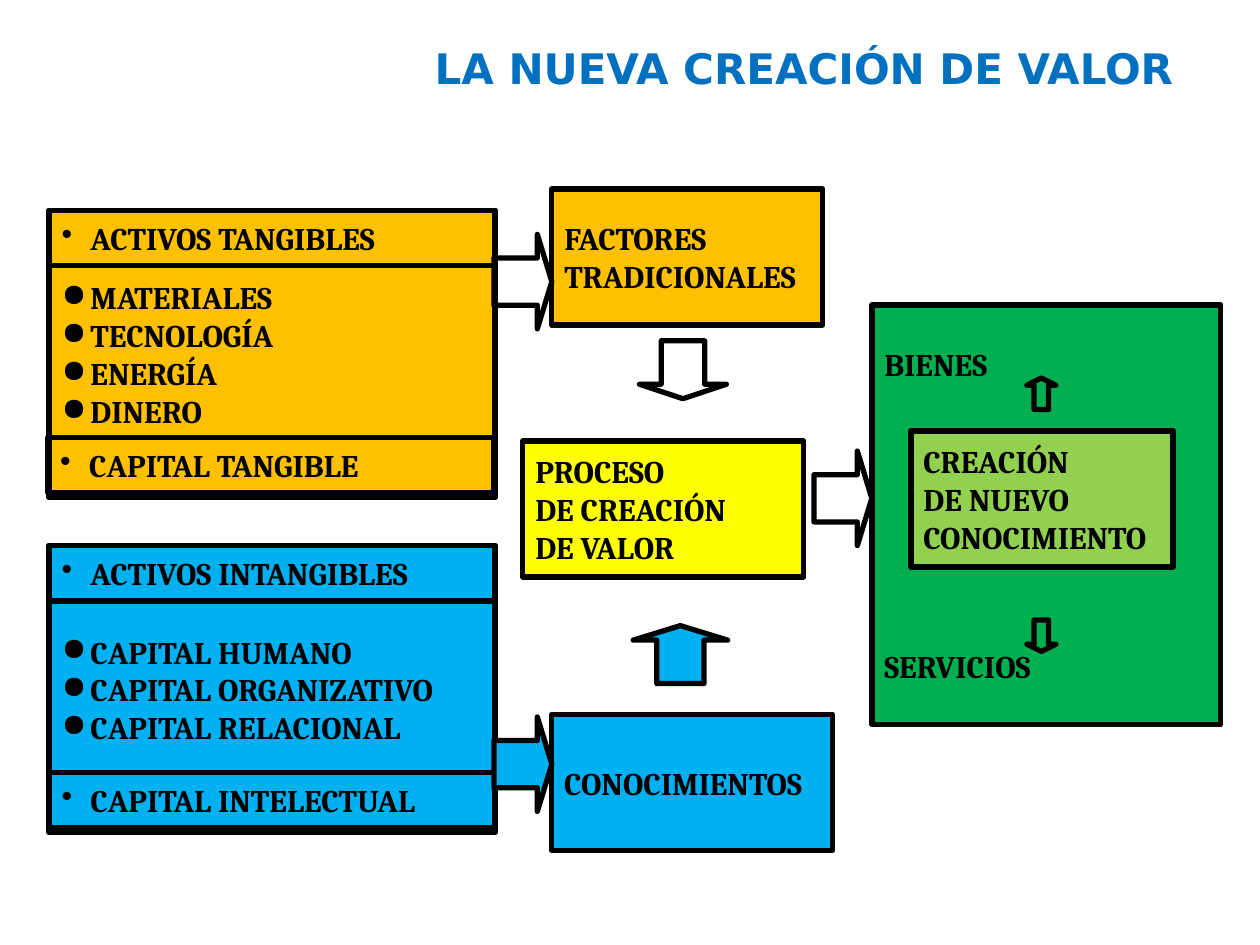
import pptx
from pptx.dml.color import RGBColor
from pptx.enum.shapes import MSO_SHAPE
from pptx.enum.text import MSO_ANCHOR, PP_ALIGN
from pptx.oxml.ns import qn
from pptx.util import Inches, Pt
from lxml import etree

COLORS = {
    "black": "000000", "title": "0070C0", "amber": "FFC000", "blue": "00B0F0",
    "yellow": "FFFF00", "green": "00B050", "lime": "92D050",
}


def write(sp, paragraphs, size=18, font="Cambria", color="black", bullet=None, gap=0):
    tf = sp.text_frame
    tf.word_wrap = True
    tf.vertical_anchor = MSO_ANCHOR.MIDDLE
    for i, text in enumerate(paragraphs):
        p = tf.paragraphs[0] if i == 0 else tf.add_paragraph()
        p.text = text
        p.alignment = PP_ALIGN.LEFT
        p.space_before = Pt(gap if i else 0)
        if bullet:
            pPr = p._p.get_or_add_pPr()
            pPr.set("marL", str(Inches(0.23)))
            pPr.set("indent", str(-Inches(0.23)))
            clr = etree.SubElement(pPr, qn("a:buClr"))
            etree.SubElement(clr, qn("a:srgbClr"), val=COLORS["black"])
            etree.SubElement(pPr, qn("a:buChar"), char=bullet)
        for r in p.runs:
            r.font.name = font
            r.font.size = Pt(size)
            r.font.bold = True
            r.font.color.rgb = RGBColor.from_string(COLORS[color])


def add_outlined(kind, left, top, width, height, fill=None):
    sp = s.shapes.add_shape(kind, Inches(left), Inches(top), Inches(width), Inches(height))
    sp.shadow.inherit = False
    if fill:
        sp.fill.solid()
        sp.fill.fore_color.rgb = RGBColor.from_string(COLORS[fill])
    else:
        sp.fill.background()
    sp.line.color.rgb = RGBColor.from_string(COLORS["black"])
    sp.line.width = Pt(3)
    return sp


prs = pptx.Presentation()
prs.slide_width, prs.slide_height = Inches(10), Inches(7.5)
s = prs.slides.add_slide(prs.slide_layouts[5])

title = s.shapes.title
title.left, title.top = Inches(3.35), Inches(0.29)
title.width, title.height = Inches(6.23), Inches(0.5)
write(title, ["LA NUEVA CREACIÓN DE VALOR"], size=24, font="DejaVu Sans", color="title")

# Asset panels: a list between a heading strip and a total strip
panels = [
    (1.67, "amber", "ACTIVOS TANGIBLES",
     ["MATERIALES", "TECNOLOGÍA", "ENERGÍA", "DINERO"], "CAPITAL TANGIBLE", 0.38),
    (4.33, "blue", "ACTIVOS INTANGIBLES",
     ["CAPITAL HUMANO", "CAPITAL ORGANIZATIVO", "CAPITAL RELACIONAL"],
     "CAPITAL INTELECTUAL", 0.39),
]
for top, fill, heading, items, total, total_left in panels:
    panel = add_outlined(MSO_SHAPE.RECTANGLE, 0.39, top, 3.54, 2.28, fill)
    write(panel, items, bullet="●")
    for left, strip_top, text in [(0.39, top, heading), (total_left, top + 1.8, total)]:
        strip = add_outlined(MSO_SHAPE.RECTANGLE, left, strip_top, 3.54, 0.44)
        write(strip, [text], bullet="•")

# Process boxes; the gap separates the two outputs of the green box
boxes = [
    (4.38, 1.5, 2.15, 1.08, "amber", ["FACTORES\nTRADICIONALES"], 0),
    (4.15, 3.5, 2.23, 1.08, "yellow", ["PROCESO\nDE CREACIÓN\nDE VALOR"], 0),
    (4.38, 5.67, 2.23, 1.08, "blue", ["CONOCIMIENTOS"], 0),
    (6.92, 2.42, 2.77, 3.33, "green", ["BIENES", "SERVICIOS"], 151),
    (7.23, 3.42, 2.08, 1.08, "lime", ["CREACIÓN\nDE NUEVO\nCONOCIMIENTO"], 0),
]
for left, top, width, height, fill, paragraphs, gap in boxes:
    box = add_outlined(MSO_SHAPE.RECTANGLE, left, top, width, height, fill)
    write(box, paragraphs, gap=gap)

arrows = [
    (MSO_SHAPE.RIGHT_ARROW, 3.92, 1.86, 0.46, 0.75, 0, None),
    (MSO_SHAPE.RIGHT_ARROW, 5.19, 2.59, 0.46, 0.69, 90, None),
    (MSO_SHAPE.RIGHT_ARROW, 3.92, 5.69, 0.46, 0.75, 0, "blue"),
    (MSO_SHAPE.RIGHT_ARROW, 5.17, 4.82, 0.46, 0.75, 270, "blue"),
    (MSO_SHAPE.RIGHT_ARROW, 6.46, 3.58, 0.46, 0.75, 0, None),
    (MSO_SHAPE.UP_ARROW, 8.15, 3, 0.23, 0.25, 0, None),
    (MSO_SHAPE.DOWN_ARROW, 8.15, 4.92, 0.23, 0.25, 0, None),
]
for kind, left, top, width, height, rotation, fill in arrows:
    arrow = add_outlined(kind, left, top, width, height, fill)
    arrow.adjustments[0] = 0.5
    arrow.adjustments[1] = 0.25
    arrow.rotation = rotation

prs.save("out.pptx")
